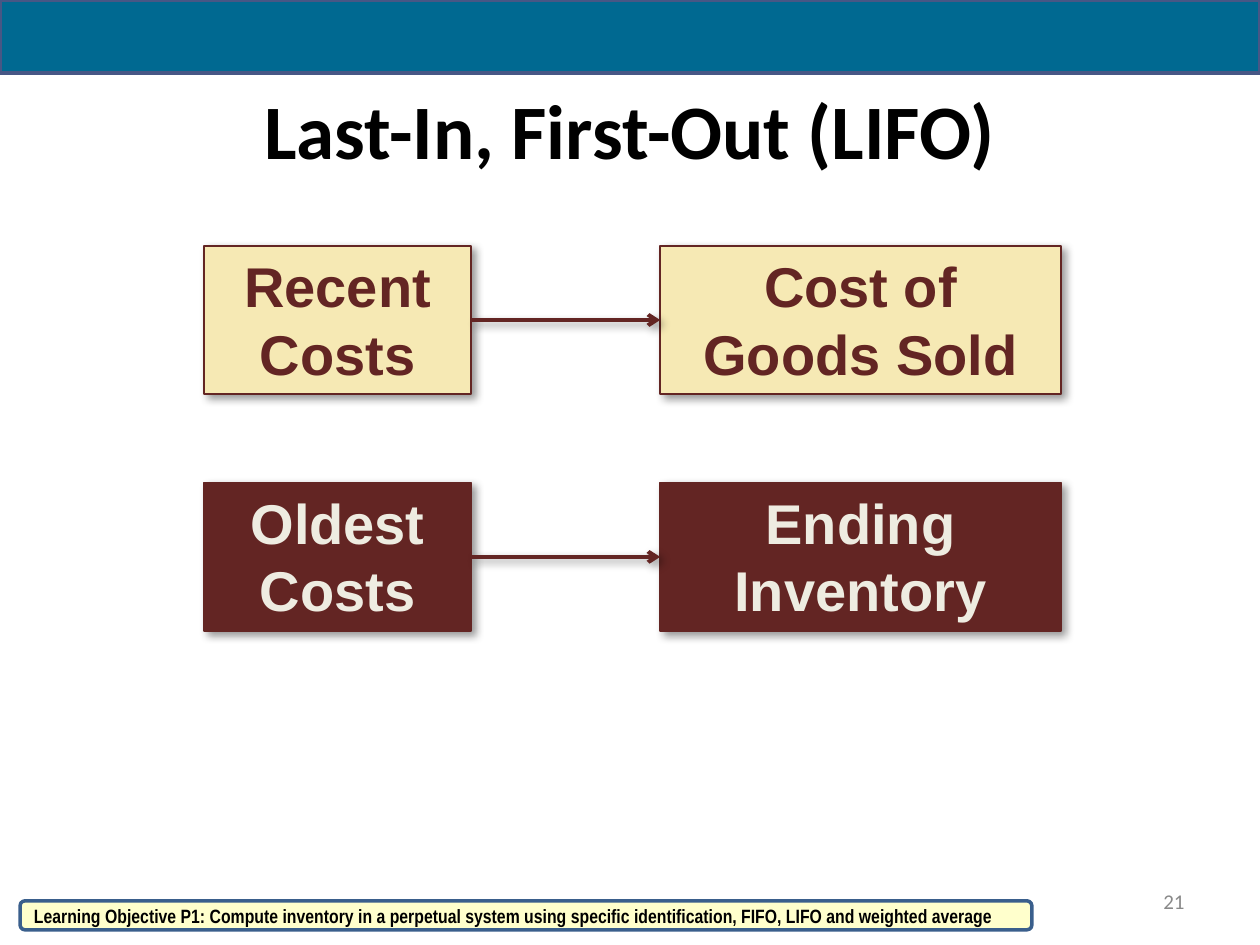
import dataclasses

import lxml.etree
import pptx
import pptx.dml.color
import pptx.enum.shapes
import pptx.enum.text
import pptx.oxml.ns
import pptx.util

Inches = pptx.util.Inches
Pt = pptx.util.Pt
RGB = pptx.dml.color.RGBColor.from_string
ALIGN = pptx.enum.text.PP_ALIGN
ANCHOR = pptx.enum.text.MSO_ANCHOR
SHAPE = pptx.enum.shapes.MSO_SHAPE
qn = pptx.oxml.ns.qn


@dataclasses.dataclass
class Theme:
    band: str = "006991"
    band_line: str = "475785"
    cream: str = "F6E9B4"
    maroon: str = "632523"
    ivory: str = "EEECE1"
    note: str = "FFFFCC"
    note_line: str = "3A5F8C"
    black: str = "000000"
    grey: str = "898989"
    title_size: int = 44
    box_size: int = 32
    number_size: int = 12
    note_size: int = 11


theme = Theme()


def write(sp, text, size, color, font="Arial", bold=True,
          align=ALIGN.CENTER, anchor=ANCHOR.MIDDLE):
    tf = sp.text_frame
    tf.word_wrap = True
    tf.vertical_anchor = anchor
    p = tf.paragraphs[0]
    p.alignment = align
    r = p.add_run()
    r.text = text
    r.font.name = font
    r.font.size = Pt(size)
    r.font.bold = bold
    r.font.color.rgb = RGB(color)


def style(sp, line, width, fill=None, shadow=False):
    if fill:
        sp.fill.solid()
        sp.fill.fore_color.rgb = RGB(fill)
    sp.line.color.rgb = RGB(line)
    sp.line.width = Pt(width)
    effects = lxml.etree.SubElement(sp._element.spPr, qn("a:effectLst"))
    if shadow:
        outer = lxml.etree.SubElement(
            effects, qn("a:outerShdw"), blurRad=str(Pt(5)), dist=str(Pt(3)),
            dir="2700000", algn="tl", rotWithShape="0")
        color = lxml.etree.SubElement(outer, qn("a:srgbClr"), val=theme.black)
        lxml.etree.SubElement(color, qn("a:alpha"), val="40000")


prs = pptx.Presentation()
prs.slide_width = Inches(10)
prs.slide_height = Inches(7.5)
s = prs.slides.add_slide(prs.slide_layouts[6])

sp = s.shapes.add_textbox(Inches(0.5), Inches(0.5), Inches(9), Inches(1.05))
write(sp, "Last-In, First-Out (LIFO)", theme.title_size, theme.black, font="Calibri")

box_height = 1.18
source_left, source_width = 1.62, 2.12
target_left, target_width = 5.24, 3.18
flows = [
    (1.95, "Recent Costs", "Cost of Goods Sold", theme.cream, theme.maroon),
    (3.83, "Oldest Costs", "Ending Inventory", theme.maroon, theme.ivory),
]
for top, source, target, fill, color in flows:
    for left, width, text in [(source_left, source_width, source),
                              (target_left, target_width, target)]:
        sp = s.shapes.add_shape(SHAPE.RECTANGLE, Inches(left), Inches(top),
                                Inches(width), Inches(box_height))
        style(sp, theme.maroon, 1, fill=fill, shadow=True)
        write(sp, text, theme.box_size, color, anchor=ANCHOR.TOP)
    middle = Inches(top + box_height / 2)
    arrow = s.shapes.add_connector(pptx.enum.shapes.MSO_CONNECTOR.STRAIGHT,
                                   Inches(source_left + source_width), middle,
                                   Inches(target_left), middle)
    style(arrow, theme.maroon, 2.25, shadow=True)
    lxml.etree.SubElement(arrow.line._get_or_add_ln(), qn("a:tailEnd"), type="arrow")

band = s.shapes.add_shape(SHAPE.RECTANGLE, 0, 0, prs.slide_width, Inches(0.58))
style(band, theme.band_line, 2.25, fill=theme.band)

sp = s.shapes.add_textbox(Inches(7.17), Inches(6.95), Inches(2.33), Inches(0.4))
write(sp, "21", theme.number_size, theme.grey, font="Calibri", bold=False,
      align=ALIGN.RIGHT)

sp = s.shapes.add_shape(SHAPE.ROUNDED_RECTANGLE, Inches(0.16), Inches(7.15),
                        Inches(8.03), Inches(0.23))
style(sp, theme.note_line, 2, fill=theme.note)
write(sp, "Learning Objective P1: Compute inventory in a perpetual system using "
      "specific identification, FIFO, LIFO and weighted average",
      theme.note_size, theme.black, font="Arial Narrow", align=ALIGN.LEFT)

prs.save("out.pptx")
